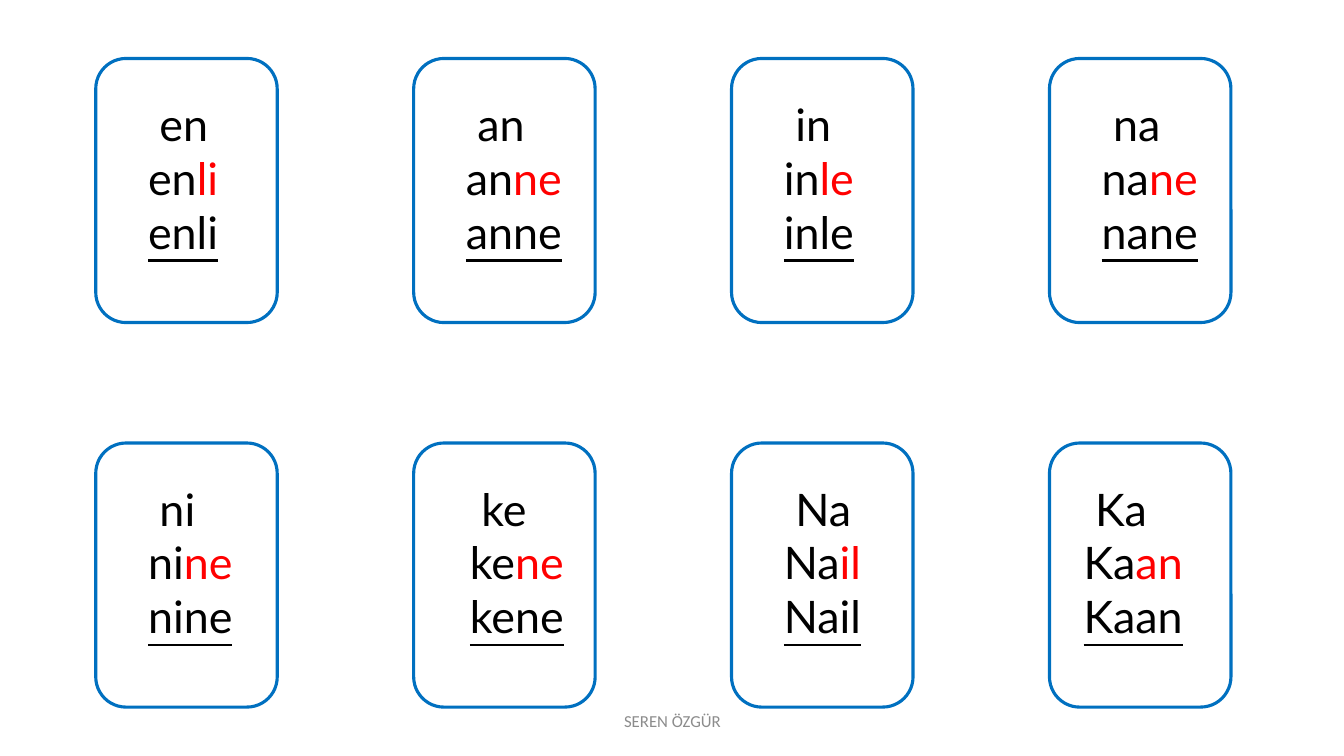
import pptx
import pptx.util
import pptx.dml.color
import pptx.enum.shapes
import pptx.enum.text

Inches = pptx.util.Inches
RGBColor = pptx.dml.color.RGBColor

BLACK = RGBColor(0x00, 0x00, 0x00)
RED = RGBColor(0xFF, 0x00, 0x00)
BLUE = RGBColor(0x00, 0x70, 0xC0)
GREY = RGBColor(0x8C, 0x8C, 0x8C)

# First syllable, second syllable, text offset from the card, text width
SYLLABLE_ROWS = [
    [("en", "li", 0.42, 1.17), ("an", "ne", 0.42, 1.17),
     ("in", "le", 0.42, 1.17), ("na", "ne", 0.42, 1.17)],
    [("ni", "ne", 0.42, 1.17), ("ke", "ne", 0.46, 1.17),
     ("Na", "il", 0.42, 1.17), ("Ka", "an", 0.24, 1.35)],
]
FIRST_LEFT, COLUMN_STEP = 0.95, 3.153
FIRST_TOP, ROW_STEP = 0.58, 3.815


def write(paragraph, text, size=32, font="Lato", color=BLACK, underline=None):
    """Add text to a paragraph in the given format."""
    run = paragraph.add_run()
    run.text = text
    run.font.size = pptx.util.Pt(size)
    run.font.name = font
    run.font.color.rgb = color
    run.font.underline = underline


class SyllableSlide:
    def __init__(self, slide, outline=BLUE, outline_width=2.25):
        self.shapes = slide.shapes
        self.outline = outline
        self.outline_width = outline_width

    def frame(self, left, top):
        card = self.shapes.add_shape(
            pptx.enum.shapes.MSO_SHAPE.ROUNDED_RECTANGLE,
            Inches(left), Inches(top), Inches(1.8), Inches(2.62))
        card.shadow.inherit = False
        card.fill.background()
        card.line.color.rgb = self.outline
        card.line.width = pptx.util.Pt(self.outline_width)

    def text_area(self, left, top, width, height):
        area = self.shapes.add_textbox(
            Inches(left), Inches(top), Inches(width), Inches(height))
        area.text_frame.word_wrap = True
        return area.text_frame

    def word(self, left, top, width, first, second):
        frame = self.text_area(left, top, width, 1.72)
        frame.auto_size = pptx.enum.text.MSO_AUTO_SIZE.SHAPE_TO_FIT_TEXT
        lines = frame.paragraphs[0]
        write(lines, " " + first)
        lines.add_line_break()
        write(lines, first)
        write(lines, second, color=RED)
        lines.add_line_break()
        write(lines, first + second, underline=True)

    def footer(self, text):
        frame = self.text_area(4.42, 6.95, 4.5, 0.4)
        frame.vertical_anchor = pptx.enum.text.MSO_ANCHOR.MIDDLE
        credit = frame.paragraphs[0]
        credit.alignment = pptx.enum.text.PP_ALIGN.CENTER
        write(credit, text, size=12, font="Calibri", color=GREY)


def main():
    deck = pptx.Presentation()
    deck.slide_width = Inches(13.33)
    deck.slide_height = Inches(7.5)
    page = SyllableSlide(deck.slides.add_slide(deck.slide_layouts[6]))

    # Grid of word cards
    for row, words in enumerate(SYLLABLE_ROWS):
        top = FIRST_TOP + row * ROW_STEP
        for column, (first, second, offset, width) in enumerate(words):
            left = FIRST_LEFT + column * COLUMN_STEP
            page.frame(left, top)
            page.word(left + offset, top + 0.33, width, first, second)

    # Footer
    page.footer("SEREN ÖZGÜR")
    deck.save("out.pptx")


if __name__ == "__main__":
    main()
